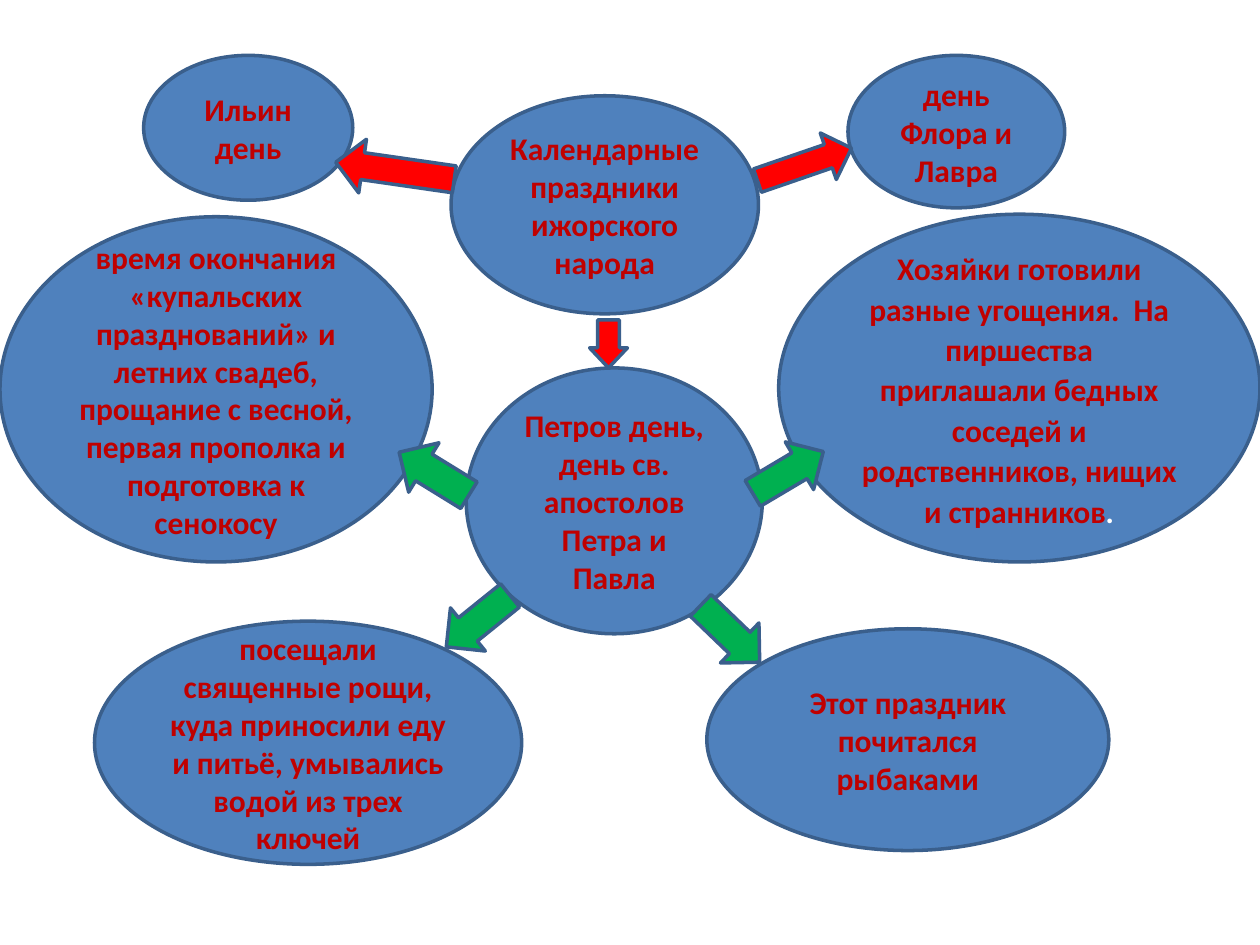
from pptx import Presentation
from pptx.dml.color import RGBColor
from pptx.enum.shapes import MSO_SHAPE as Kind
from pptx.enum.text import MSO_ANCHOR as Anchor, PP_ALIGN as Align
from pptx.util import Inches, Pt

BLUE, EDGE, TEXT = "4F81BD", "3A5F8C", "C00000"
RED, GREEN, WHITE = "FF0000", "00B050", "FFFFFF"

# Bubbles: centre x, centre y, width, height (% of slide), text
BUBBLES = [
    (48.75, 53, 23.5, 28.13, "Петров день, день св. апостолов Петра и Павла"),
    (48, 21.67, 24.4, 23.07, "Календарные праздники ижорского народа"),
    (19.7, 13.53, 16.6, 15.33, "Ильин день"),
    (75.9, 13.93, 17.2, 16.13, "день Флора и Лавра"),
    (24.45, 78.6, 33.9, 25.73, "посещали священные рощи, куда приносили еду "
     "и питьё, умывались водой из трех ключей"),
    (80.9, 41.07, 38.2, 36.8, "Хозяйки готовили разные угощения.  На пиршества "
     "приглашали бедных соседей и родственников, нищих и странников"),
    (17.15, 41.2, 34.3, 36.53, "время окончания «купальских празднований» "
     "и летних свадеб, прощание с весной, первая прополка "
     "и подготовка к сенокосу"),
    (72.05, 78.27, 31.9, 23.47, "Этот праздник почитался рыбаками"),
]
FEAST = 5  # the bubble with looser lines and a white full stop

# Arrows: centre x, centre y, width, height (% of slide), turn, kind, colour, shape
RIGHT, DOWN = Kind.RIGHT_ARROW, Kind.DOWN_ARROW
ARROWS = [
    (63.85, 17.4, 7.9, 5.2, 341, RIGHT, RED, (0.5, 0.5)),
    (31.35, 18.07, 9.5, 5.73, 188.2, RIGHT, RED, (0.5, 0.5)),
    (48.3, 36.4, 3, 5.07, 0, DOWN, RED, (0.58, 0.53)),
    (62.55, 50, 6.5, 5.87, 329.3, RIGHT, GREEN, (0.54, 0.5)),
    (34.45, 50.13, 6.5, 6.13, 211.6, RIGHT, GREEN, (0.54, 0.5)),
    (57.95, 67.07, 6.5, 5.87, 43.9, RIGHT, GREEN, (0.54, 0.5)),
    (37.95, 65.73, 6.5, 5.87, 141.1, RIGHT, GREEN, (0.54, 0.5)),
]

deck = Presentation()
deck.slide_width, deck.slide_height = Inches(10), Inches(7.5)
slide = deck.slides.add_slide(deck.slide_layouts[6])


def paint(target, color):
    target.rgb = RGBColor.from_string(color)


def add_part(kind, x, y, w, h, color):
    """Place a filled shape by its centre and size in percent."""
    wide, high = deck.slide_width / 100, deck.slide_height / 100
    part = slide.shapes.add_shape(
        kind, int((x - w / 2) * wide), int((y - h / 2) * high),
        int(w * wide), int(h * high))
    part.shadow.inherit = False
    part.fill.solid()
    paint(part.fill.fore_color, color)
    paint(part.line.color, EDGE)
    part.line.width = Pt(2)
    return part


def add_run(para, text, color, italic=None):
    run = para.add_run()
    run.text = text
    font = run.font
    font.name, font.size, font.bold, font.italic = "Calibri", Pt(18), True, italic
    paint(font.color, color)


# Bubbles
for i, (x, y, w, h, text) in enumerate(BUBBLES):
    frame = add_part(Kind.OVAL, x, y, w, h, BLUE).text_frame
    frame.word_wrap = True
    frame.vertical_anchor = Anchor.MIDDLE
    para = frame.paragraphs[0]
    para.alignment = Align.CENTER
    add_run(para, text, TEXT)
    if i == FEAST:
        para.line_spacing, para.space_after = 1.07, Pt(8)
        add_run(para, ".", WHITE, italic=True)

# Arrows
for x, y, w, h, turn, kind, color, form in ARROWS:
    arrow = add_part(kind, x, y, w, h, color)
    arrow.rotation = turn
    for i, share in enumerate(form):
        arrow.adjustments[i] = share

deck.save("out.pptx")
